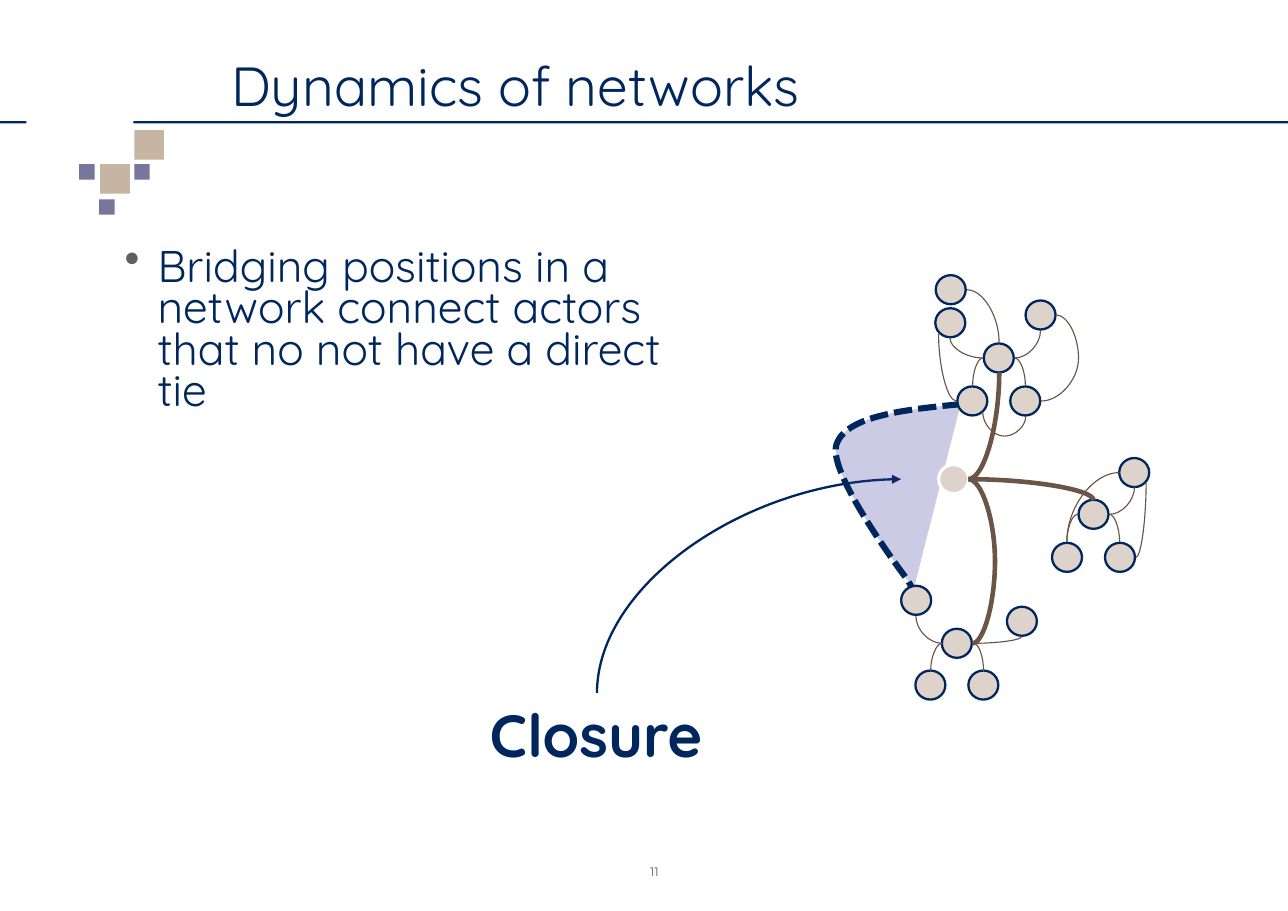
"""Build the slide "Dynamics of networks" with its closure diagram."""
from lxml.etree import SubElement
from pptx import Presentation
from pptx.dml.color import RGBColor
from pptx.enum.dml import MSO_LINE
from pptx.enum.shapes import MSO_CONNECTOR, MSO_SHAPE
from pptx.enum.text import MSO_ANCHOR as ANCHOR, MSO_AUTO_SIZE as AUTO, PP_ALIGN as ALIGN
from pptx.oxml.ns import qn
from pptx.util import Pt

NAVY = RGBColor(0x00, 0x27, 0x5D)
VIOLET = RGBColor(0x77, 0x76, 0x9D)
TAN = RGBColor(0xC5, 0xB5, 0xA2)
SAND = RGBColor(0xDD, 0xD3, 0xCB)
BROWN = RGBColor(0x6A, 0x55, 0x46)
INDIGO = RGBColor(0x33, 0x33, 0x99)
PLUM = RGBColor(0x72, 0x53, 0x7C)
WHITE = RGBColor(0xFF, 0xFF, 0xFF)

RULES = [(0, 17.3), (87.1, 754.6)]
SQUARES = [
    (51.8, 107.3, 10.1, VIOLET), (87.8, 85, 19.4, TAN), (65.5, 107.3, 19.4, TAN),
    (64.8, 130.3, 10.1, VIOLET), (87.8, 107.3, 10.1, VIOLET),
]
ACTORS = [
    (652.7, 234), (670, 262.1), (635.4, 262.1), (680, 205.9), (621, 211), (621.3, 189.4),
    (714.6, 336.2), (731.9, 364.3), (697.3, 364.3), (741.2, 308.9),
    (625.3, 420.5), (608, 447.8), (642.6, 447.8), (598.7, 392.4), (667.8, 406.1),
]
HUB = (623.2, 313.2)
HUB_EDGE = (632.9, 313.2)
TIES = [
    ((663.1, 234), (670.1, 252)), ((642.2, 234), (635.6, 252)),
    ((663.1, 234), (680, 215.9)), ((642.2, 234), (620.8, 220.8)),
    ((632, 189.4), (652.9, 223.9)), ((625, 262.1), (613.4, 218.2)),
    ((656.3, 285.1), (642.2, 269.3)), ((656.3, 285.1), (670.3, 272.2)),
    ((725, 336.2), (731.7, 354.2)), ((704.2, 336.2), (697.2, 354.2)),
    ((725, 336.2), (741.4, 318.2)), ((731.5, 308.9), (697.2, 354.2)),
    ((742.3, 364.3), (749, 315.4)),
    ((615.6, 420.5), (608.2, 438.5)), ((636.5, 420.5), (642.8, 438.5)),
    ((615.6, 420.5), (598.5, 402.5)), ((636.5, 420.5), (667.6, 416.2)),
]
WEDGE_CURVES = [
    ((627.8, 264.2), (589.7, 267.8), (552.2, 272.2), (546.5, 290.9)),
    ((546.5, 290.9), (540.7, 310.3), (593.3, 379.4), (593.3, 379.4)),
]
WEDGE_TIP = (596.9, 385.9)


def write(frame, text, size=29, color=NAVY, font="Quicksand", bold=False,
          align=ALIGN.LEFT, anchor=ANCHOR.TOP, wrap=True, insets=(5.8, 2.9), spacing=None):
    frame.word_wrap = wrap
    frame.auto_size = AUTO.NONE
    frame.vertical_anchor = anchor
    frame.margin_left = frame.margin_right = Pt(insets[0])
    frame.margin_top = frame.margin_bottom = Pt(insets[1])
    paragraph = frame.paragraphs[0]
    paragraph.alignment = align
    if spacing:
        paragraph.line_spacing = spacing
    run = paragraph.add_run()
    run.text = text
    run.font.name = font
    run.font.size = Pt(size)
    run.font.bold = bold
    run.font.color.rgb = color
    return paragraph


def curve_points(curve, steps=24):
    for step in range(1, steps + 1):
        t = step / steps
        weights = ((1 - t) ** 3, 3 * t * (1 - t) ** 2, 3 * t * t * (1 - t), t ** 3)
        yield tuple(sum(w * point[axis] for w, point in zip(weights, curve)) for axis in (0, 1))


class NetworkSlide:
    def __init__(self, presentation):
        self.slide = presentation.slides.add_slide(presentation.slide_layouts[5])
        self.shapes = self.slide.shapes

    def title(self, text, left, top, width, height):
        title = self.shapes.title
        title.left, title.top, title.width, title.height = map(Pt, (left, top, width, height))
        write(title.text_frame, text, size=36)

    def text(self, text, left, top, width, height, **style):
        box = self.shapes.add_textbox(*map(Pt, (left, top, width, height)))
        return write(box.text_frame, text, **style)

    def bullet(self, text, left, top, width, height, **style):
        properties = self.text(text, left, top, width, height, **style)._p.get_or_add_pPr()
        properties.set("marL", str(Pt(21.6)))
        properties.set("indent", str(-Pt(21.6)))
        color = SubElement(properties, qn("a:buClr"))
        SubElement(color, qn("a:srgbClr"), val="606060")
        SubElement(properties, qn("a:buChar"), char="•")

    def block(self, left, top, width, height, fill, kind=MSO_SHAPE.RECTANGLE,
              line=None, weight=1.5):
        shape = self.shapes.add_shape(kind, *map(Pt, (left, top, width, height)))
        shape.shadow.inherit = False
        shape.fill.solid()
        shape.fill.fore_color.rgb = fill
        if line is None:
            shape.line.fill.background()
        else:
            shape.line.color.rgb = line
            shape.line.width = Pt(weight)

    def actor(self, center, line=NAVY, weight=1.5):
        width, height = 19.6, 19
        self.block(center[0] - width / 2, center[1] - height / 2, width, height, SAND,
                   MSO_SHAPE.OVAL, line, weight)

    def curve(self, start, end, color=BROWN, weight=0.75, bulge=None, arrow=False):
        connector = self.shapes.add_connector(MSO_CONNECTOR.CURVE, *map(Pt, start + end))
        connector.line.color.rgb = color
        connector.line.width = Pt(weight)
        properties = connector._element.spPr
        SubElement(properties, qn("a:effectLst"))
        geometry = properties.find(qn("a:prstGeom"))
        if bulge is None:
            geometry.set("prst", "curvedConnector2")
        else:
            ratio = round((bulge - start[0]) / (end[0] - start[0]) * 100000)
            SubElement(geometry.find(qn("a:avLst")), qn("a:gd"), name="adj1", fmla=f"val {ratio}")
        if arrow:
            SubElement(properties.find(qn("a:ln")), qn("a:headEnd"), type="triangle")

    def wedge(self, curves, tip):
        points = [point for curve in curves for point in curve_points(curve)] + [tip]
        builder = self.shapes.build_freeform(*map(Pt, curves[0][0]))
        builder.add_line_segments([(Pt(x), Pt(y)) for x, y in points], close=False)
        shape = builder.convert_to_shape()
        shape.shadow.inherit = False
        shape.fill.solid()
        shape.fill.fore_color.rgb = INDIGO
        color = shape._element.spPr.find(qn("a:solidFill")).find(qn("a:srgbClr"))
        SubElement(color, qn("a:alpha"), val="25000")
        shape.line.color.rgb = NAVY
        shape.line.width = Pt(4)
        shape.line.dash_style = MSO_LINE.SQUARE_DOT


def main():
    presentation = Presentation()
    presentation.slide_width = Pt(841.68)
    presentation.slide_height = Pt(595.44)
    page = NetworkSlide(presentation)

    for left, width in RULES:
        page.block(left, 79.2, width, 1.5, NAVY)
    for left, top, side, color in SQUARES:
        page.block(left, top, side, side, color)
    page.title("Dynamics of networks", 145.4, 31, 661.7, 50.4)
    page.text("11", 349.2, 561.6, 157, 18, size=8, color=PLUM, font="Montserrat",
              align=ALIGN.CENTER, anchor=ANCHOR.MIDDLE, insets=(0, 0), spacing=0.7)
    page.bullet("Bridging positions in a network connect actors that no not have a direct tie",
                75.6, 159.8, 384.5, 134.6, spacing=0.78)
    page.text("Closure", 310.3, 452.9, 158.4, 54.7, size=39, bold=True,
              align=ALIGN.CENTER, wrap=False, insets=(7.2, 3.6))
    page.curve((588.9, 313.2), (390.2, 452.9), NAVY, 1.5, arrow=True)
    page.wedge(WEDGE_CURVES, WEDGE_TIP)

    for center in ACTORS:
        page.actor(center)
    for start, end in TIES:
        page.curve(start, end)
    page.curve((690.5, 205.9), (680.4, 262.1), bulge=704.9)
    page.actor(HUB, WHITE, 2)
    page.curve(HUB_EDGE, (714.6, 326.9), weight=3)
    page.curve(HUB_EDGE, (635.5, 420.5), weight=3, bulge=650.2)
    page.curve(HUB_EDGE, (653, 243.4), weight=3)
    presentation.save("out.pptx")


if __name__ == "__main__":
    main()
